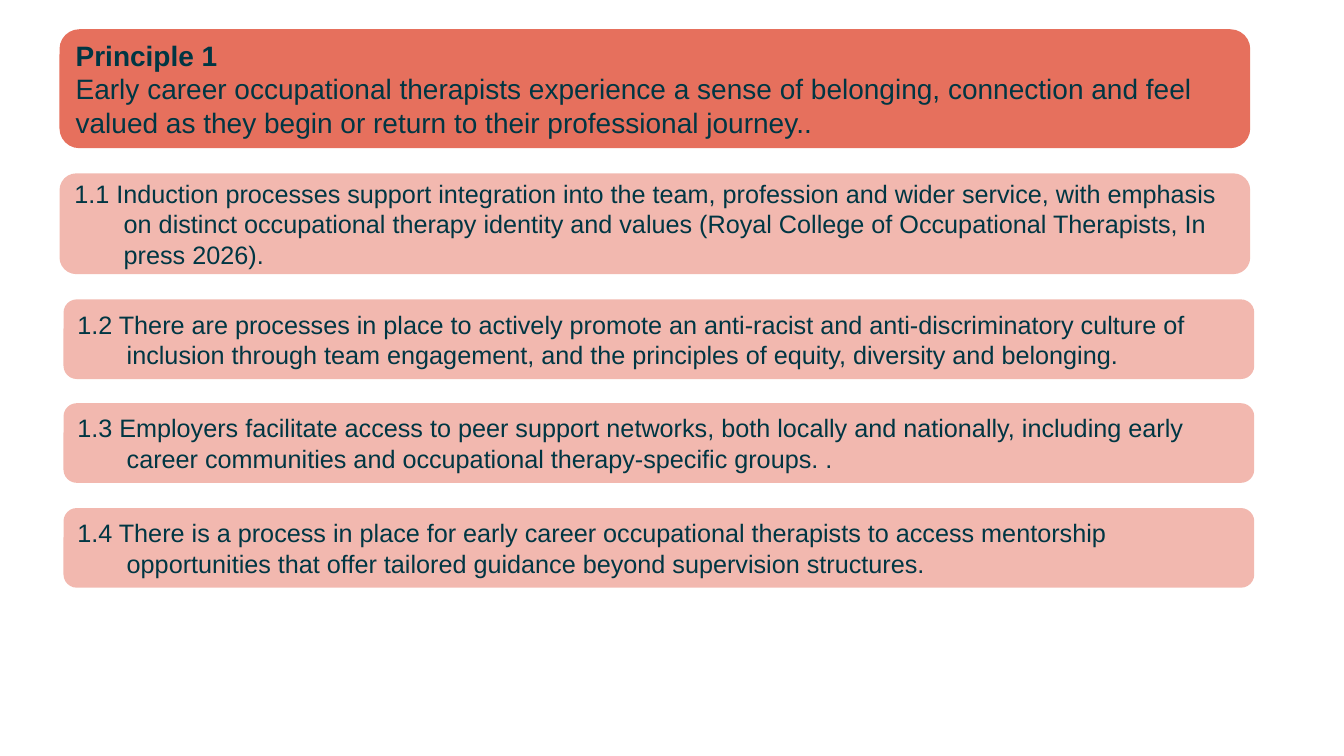
from lxml import etree
from pptx import Presentation
from pptx.dml.color import RGBColor
from pptx.enum.shapes import MSO_SHAPE
from pptx.enum.text import MSO_ANCHOR, MSO_AUTO_SIZE, PP_ALIGN
from pptx.oxml.ns import qn
from pptx.util import Inches, Pt

ROUNDED = MSO_SHAPE.ROUNDED_RECTANGLE
MIDDLE = MSO_ANCHOR.MIDDLE
LEFT = PP_ALIGN.LEFT
NO_FIT = MSO_AUTO_SIZE.NONE
CORAL = RGBColor(0xE6, 0x70, 0x5D)
DARK_TEAL = RGBColor(0x00, 0x36, 0x43)
PANEL_WIDTH = 11.81
TITLE_LEFT, TITLE_TOP, TITLE_HEIGHT = 0.59, 0.29, 1.18

prs = Presentation()
prs.slide_width = Inches(13.33)
prs.slide_height = Inches(7.5)
slide = prs.slides.add_slide(prs.slide_layouts[5])


def add_panel(left, top, height):
    panel = slide.shapes.add_shape(
        ROUNDED, Inches(left), Inches(top), Inches(PANEL_WIDTH), Inches(height))
    panel.shadow.inherit = False
    panel.fill.solid()
    panel.fill.fore_color.rgb = CORAL
    panel.line.fill.background()
    return panel


def format_text(frame, size):
    frame.word_wrap = True
    frame.auto_size = NO_FIT
    frame.vertical_anchor = MIDDLE
    for paragraph in frame.paragraphs:
        paragraph.alignment = LEFT
        for run in paragraph.runs:
            run.font.name = "Arial"
            run.font.size = Pt(size)
            run.font.color.rgb = DARK_TEAL


# Principle heading: title on a solid panel
heading_panel = add_panel(TITLE_LEFT, TITLE_TOP, TITLE_HEIGHT)
heading = slide.shapes.title
heading.left, heading.top = Inches(TITLE_LEFT), Inches(TITLE_TOP)
heading.width, heading.height = Inches(PANEL_WIDTH), Inches(TITLE_HEIGHT)
heading._element.addprevious(heading_panel._element)
heading.text_frame.text = (
    "Principle 1\n"
    "Early career occupational therapists experience a sense of belonging, "
    "connection and feel valued as they begin or return to their "
    "professional journey..")
heading.text_frame.margin_left = heading.text_frame.margin_right = Inches(0.16)
format_text(heading.text_frame, 20)
heading.text_frame.paragraphs[0].runs[0].font.bold = True

# Numbered standards: left, top, height, text
standards = [
    (0.59, 1.72, 1.0,
     "1.1 Induction processes support integration into the team, profession "
     "and wider service, with emphasis on distinct occupational therapy "
     "identity and values (Royal College of Occupational Therapists, "
     "In press 2026)."),
    (0.63, 2.97, 0.79,
     "1.2 There are processes in place to actively promote an anti-racist and "
     "anti-discriminatory culture of inclusion through team engagement, and "
     "the principles of equity, diversity and belonging."),
    (0.63, 4.0, 0.79,
     "1.3 Employers facilitate access to peer support networks, both locally "
     "and nationally, including early career communities and occupational "
     "therapy-specific groups. ."),
    (0.63, 5.04, 0.79,
     "1.4 There is a process in place for early career occupational "
     "therapists to access mentorship opportunities that offer tailored "
     "guidance beyond supervision structures."),
]
for left, top, height, wording in standards:
    standard = add_panel(left, top, height)
    # Semi-transparent tint of the heading colour
    tint = standard._element.spPr.find(qn("a:solidFill")).find(qn("a:srgbClr"))
    etree.SubElement(tint, qn("a:alpha")).set("val", "49000")
    standard.text_frame.text = wording
    format_text(standard.text_frame, 18)
    # Hanging indent under the number
    indent = standard.text_frame.paragraphs[0]._p.get_or_add_pPr()
    indent.set("marL", str(Inches(0.49)))
    indent.set("indent", str(-Inches(0.49)))

prs.save("out.pptx")
